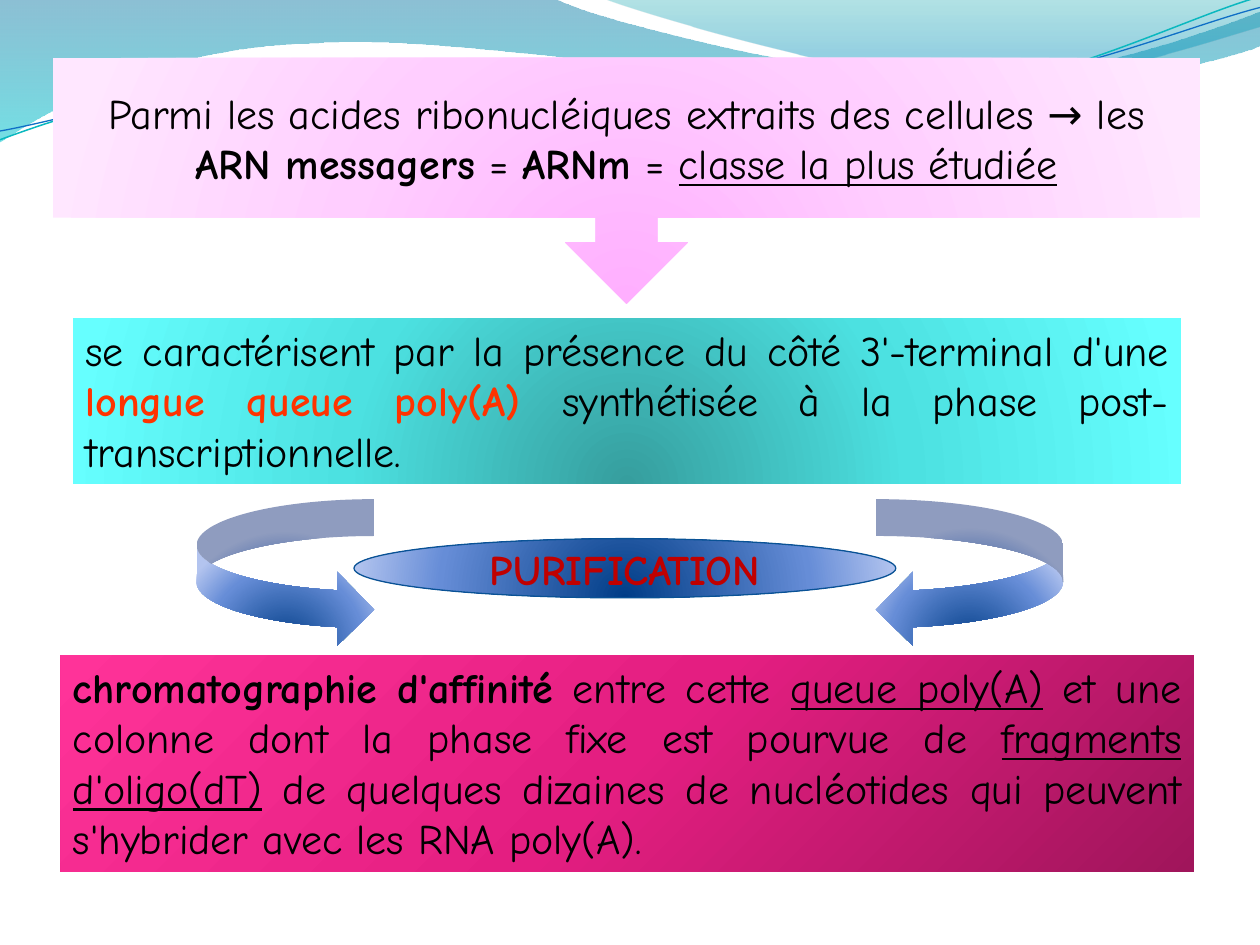
from dataclasses import dataclass
from math import cos, radians, sin
from typing import Optional

from lxml.etree import SubElement
from pptx import Presentation
from pptx.dml.color import RGBColor
from pptx.enum.shapes import MSO_SHAPE as Preset
from pptx.enum.text import MSO_ANCHOR as Anchor, PP_ALIGN as Align
from pptx.oxml.ns import qn
from pptx.util import Emu, Inches, Pt

# Grid: 100 columns by 75 rows of square cells
COLUMNS, ROWS = 100, 75
CELL = Inches(0.1)
FONT, TEXT_SIZE = "Comic Neue", Pt(24)

BLACK = RGBColor(0x00, 0x00, 0x00)
ORANGE = RGBColor(0xFF, 0x33, 0x00)
RED = RGBColor(0xC0, 0x00, 0x00)
OUTLINE = RGBColor(0x09, 0x52, 0x95)
TEAL_LINE = RGBColor(0x0A, 0xB8, 0xBF)
BLUE_LINE = RGBColor(0x0F, 0x6F, 0xC6)
WAVE_BLUE, WAVE_CYAN = RGBColor(0x00, 0x74, 0xA1), RGBColor(0x00, 0xC6, 0xCF)
CREST_TEAL, CREST_BLUE = RGBColor(0x00, 0xA1, 0xA9), RGBColor(0x00, 0x8B, 0xBF)
PINKS = (RGBColor(0xFF, 0xAF, 0xFF), RGBColor(0xFF, 0xCE, 0xFF), RGBColor(0xFF, 0xE7, 0xFF))
TEALS = (RGBColor(0x36, 0x9E, 0x9E), RGBColor(0x4C, 0xE1, 0xE1), RGBColor(0x66, 0xFF, 0xFF))
MAGENTAS = (RGBColor(0xA0, 0x15, 0x5B), RGBColor(0xE4, 0x1E, 0x81), RGBColor(0xFF, 0x33, 0x99))
BLUES = (RGBColor(0x00, 0x3D, 0x87), RGBColor(0x66, 0x8D, 0xD7), RGBColor(0xB3, 0xC4, 0xEF))


@dataclass(frozen=True)
class Gradient:
    colors: tuple
    positions: tuple = (0, 50, 100)
    alphas: tuple = (100, 100, 100)
    angle: Optional[int] = None  # None: circular, centred below the shape


@dataclass(frozen=True)
class Run:
    text: str
    bold: bool = False
    underline: bool = False
    color: RGBColor = BLACK


@dataclass(frozen=True)
class Block:
    preset: Preset
    box: tuple  # column, row, columns wide, rows high
    gradient: Gradient
    outline: Optional[RGBColor] = None
    runs: tuple = ()
    align: Align = Align.CENTER
    anchor: Anchor = Anchor.MIDDLE


@dataclass(frozen=True)
class Wave:
    start: tuple
    segments: tuple  # two numbers: straight line; six numbers: Bezier curve
    gradient: Optional[Gradient] = None
    line: Optional[RGBColor] = None
    line_width: float = 0.75
    turn: float = 0  # degrees
    pivot: tuple = (50, 5.8)


BLUE_GLOW = Gradient(BLUES, (0, 68, 100))

WAVES = (
    Wave((-0.1, -0.1), (
        (44, -0.1), (47.6, 1.7, 66.4, 6.3, 75.8, 6.3), (85.3, 6.3, 95.8, 2.6, 100, 0.9),
        (100.1, 3.6), (98.3, 4.4, 87, 7.6, 74.6, 7.5), (62.2, 7.5, 38.2, 2.8, 25.7, 3.4),
        (12.9, 3.6, 4.6, 8.3, -0.1, 11.3)),
        Gradient((WAVE_BLUE, WAVE_CYAN), (0, 100), (45, 55), 90)),
    Wave((47.9, -0.1), (
        (50.9, 1.1, 68.2, 6.2, 76.9, 6.5), (85.6, 6.9, 96.1, 3.2, 100, 2.1), (100, 0)),
        Gradient((CREST_TEAL, CREST_BLUE), (0, 80), (30, 45), 90)),
    Wave((0, 11.1), (
        (4.8, 9.3, 15.8, 5.7, 27.7, 5.2), (39.5, 4.7, 59.3, 8.9, 71.3, 8),
        (83.3, 7.1, 93.8, 1.5, 99.8, -0.2)), line=TEAL_LINE, line_width=0.85, turn=-2.7),
    Wave((0, 10.4), (
        (4.7, 9.6, 16.4, 6.1, 28.3, 5.6), (40.3, 5.1, 59.7, 8.4, 71.7, 7.5),
        (83.6, 6.7, 94.1, 2.1, 100, 0.6)), line=BLUE_LINE, turn=-2.7),
)

BLOCKS = (
    Block(Preset.RECTANGLE, (5.8, 25.25, 87.95, 13.15), Gradient(TEALS),
          runs=(Run("se caractérisent par la présence du côté 3'-terminal d'une "),
                Run("longue queue poly(A) ", bold=True, color=ORANGE),
                Run("synthétisée à la phase post-transcriptionnelle. ")),
          align=Align.JUSTIFY, anchor=Anchor.TOP),
    Block(Preset.DOWN_ARROW_CALLOUT, (4.2, 4.6, 91.05, 19.5), Gradient(PINKS),
          runs=(Run("Parmi les acides ribonucléiques extraits des cellules → les "),
                Run("ARN messagers", bold=True), Run(" = "), Run("ARNm", bold=True),
                Run(" = "), Run("classe la plus étudiée", underline=True))),
    Block(Preset.RECTANGLE, (4.8, 52, 89.95, 17.2), Gradient(MAGENTAS, angle=225),
          runs=(Run("chromatographie d'affinité", bold=True), Run(" entre cette "),
                Run("queue poly(A)", underline=True),
                Run(" et une colonne dont la phase fixe est pourvue de "),
                Run("fragments d'oligo(dT)", underline=True),
                Run(" de quelques dizaines de nucléotides qui peuvent "
                    "s'hybrider avec les RNA poly(A). ")),
          align=Align.JUSTIFY, anchor=Anchor.TOP),
    Block(Preset.CURVED_RIGHT_ARROW, (15.6, 39.62, 14.1, 11.7), BLUE_GLOW),
    Block(Preset.CURVED_LEFT_ARROW, (69.52, 39.62, 14.85, 11.7), BLUE_GLOW),
    Block(Preset.OVAL, (28.1, 42.75, 43, 4.7), BLUE_GLOW, OUTLINE,
          (Run("PURIFICATION", bold=True, color=RED),)),
)


def cells(value: float) -> Emu:
    return Emu(round(value * CELL))


def add_xml(parent, tag: str, **attributes):
    return SubElement(parent, qn(tag), {name: str(value) for name, value in attributes.items()})


def paint_gradient(shape, gradient: Gradient) -> None:
    shape.fill.gradient()
    fill = shape.element.spPr.find(qn("a:gradFill"))
    for child in list(fill):
        fill.remove(child)
    stops = add_xml(fill, "a:gsLst")
    for position, color, alpha in zip(gradient.positions, gradient.colors, gradient.alphas):
        node = add_xml(add_xml(stops, "a:gs", pos=position * 1000), "a:srgbClr", val=color)
        if alpha < 100:
            add_xml(node, "a:alpha", val=alpha * 1000)
    if gradient.angle is None:
        circle = add_xml(fill, "a:path", path="circle")
        add_xml(circle, "a:fillToRect", l=50000, t=130000, r=50000, b=-30000)
    else:
        add_xml(fill, "a:lin", ang=gradient.angle * 60000, scaled=0)


def style_shape(shape, gradient, line, line_width=0.75) -> None:
    if gradient:
        paint_gradient(shape, gradient)
    else:
        shape.fill.background()
    if line:
        shape.line.color.rgb = line
        shape.line.width = Pt(line_width)
    else:
        shape.line.fill.background()
    shape.shadow.inherit = False


def turn_back(point: tuple, wave: Wave) -> tuple:
    """Place a point where it lies before the shape is rotated."""
    angle = radians(-wave.turn)
    dx, dy = point[0] - wave.pivot[0], point[1] - wave.pivot[1]
    return (cells(wave.pivot[0] + dx * cos(angle) - dy * sin(angle)),
            cells(wave.pivot[1] + dx * sin(angle) + dy * cos(angle)))


def bend_segments(shape, segments: tuple) -> None:
    """Join each three lines that stand for one curve into a Bezier segment."""
    lines = iter(list(shape.element.spPr.iter(qn("a:lnTo"))))
    for segment in segments:
        first = next(lines)
        if len(segment) == 6:
            first.tag = qn("a:cubicBezTo")
            for line in (next(lines), next(lines)):
                first.append(line[0])
                line.getparent().remove(line)


def draw_wave(slide, wave: Wave) -> None:
    points = [wave.start]
    for segment in wave.segments:
        points += zip(segment[::2], segment[1::2])
    start, *others = [turn_back(point, wave) for point in points]
    builder = slide.shapes.build_freeform(*start)
    builder.add_line_segments(others, close=wave.gradient is not None)
    shape = builder.convert_to_shape()
    bend_segments(shape, wave.segments)
    shape.rotation = wave.turn
    style_shape(shape, wave.gradient, wave.line, wave.line_width)


def draw_block(slide, block: Block) -> None:
    shape = slide.shapes.add_shape(block.preset, *map(cells, block.box))
    style_shape(shape, block.gradient, block.outline)
    frame = shape.text_frame
    frame.word_wrap, frame.vertical_anchor = True, block.anchor
    paragraph = frame.paragraphs[0]
    paragraph.alignment = block.align
    for item in block.runs:
        run = paragraph.add_run()
        run.text = item.text
        run.font.color.rgb = item.color
        formats = {"name": FONT, "size": TEXT_SIZE, "bold": item.bold, "underline": item.underline}
        for name, value in formats.items():
            setattr(run.font, name, value)


def main() -> None:
    presentation = Presentation()
    presentation.slide_width, presentation.slide_height = cells(COLUMNS), cells(ROWS)
    slide = presentation.slides.add_slide(presentation.slide_layouts[6])
    # Decorative waves behind the content
    for wave in WAVES:
        draw_wave(slide, wave)
    # Text blocks and arrows
    for block in BLOCKS:
        draw_block(slide, block)
    presentation.save("out.pptx")


if __name__ == "__main__":
    main()
